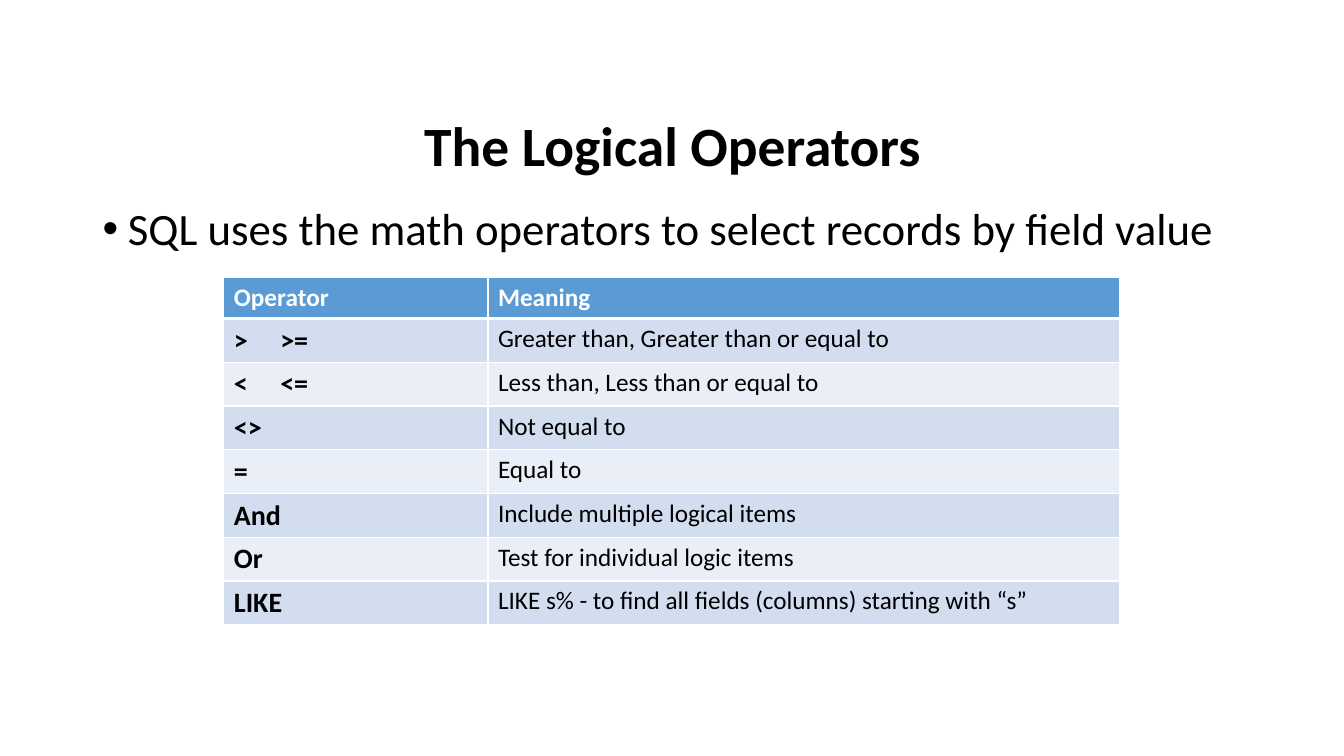
from lxml import etree
from pptx import Presentation
from pptx.dml.color import RGBColor
from pptx.enum.text import MSO_ANCHOR, PP_ALIGN
from pptx.oxml.ns import qn
from pptx.util import Inches, Pt

CENTER = PP_ALIGN.CENTER
MIDDLE = MSO_ANCHOR.MIDDLE
TOP = MSO_ANCHOR.TOP
TITLE_ONLY = 5

OPERATORS = [
    ("Operator", "Meaning"),
    (">\t>=", "Greater than, Greater than or equal to"),
    ("<\t<=", "Less than, Less than or equal to"),
    ("<>", "Not equal to"),
    ("=", "Equal to"),
    ("And", "Include multiple logical items"),
    ("Or", "Test for individual logic items"),
    ("LIKE", "LIKE s% - to find all fields (columns) starting with “s”"),
]


def rgb(hex_color):
    return RGBColor.from_string(hex_color)


class SlideBuilder:
    font = "Calibri"
    black, white = "000000", "FFFFFF"
    header_fill = "5B9BD5"
    band_fills = ("EAEFF7", "D2DEEF")

    def __init__(self, slide):
        self.slide = slide

    def style(self, paragraph, size, color, bold=False):
        font = paragraph.font
        font.name, font.size, font.bold = self.font, Pt(size), bold
        font.color.rgb = rgb(color)

    def title(self, text, left, top, width, height):
        title = self.slide.shapes.title
        title.left, title.top = Inches(left), Inches(top)
        title.width, title.height = Inches(width), Inches(height)
        frame = title.text_frame
        frame.text = text
        frame.vertical_anchor = MIDDLE
        heading = frame.paragraphs[0]
        heading.alignment = CENTER
        heading.line_spacing = 0.9
        self.style(heading, 39.6, self.black, True)

    def bullet(self, text, left, top, width, height):
        frame = self.slide.shapes.add_textbox(
            Inches(left), Inches(top), Inches(width), Inches(height)).text_frame
        frame.word_wrap = True
        frame.vertical_anchor = TOP
        statement = frame.paragraphs[0]
        statement.text = text
        statement.line_spacing = 0.9
        properties = statement._p.get_or_add_pPr()
        properties.set("marL", str(Inches(0.25)))
        properties.set("indent", str(-Inches(0.25)))
        etree.SubElement(properties, qn("a:buFont"), typeface="Arial")
        etree.SubElement(properties, qn("a:buChar"), char="•")
        self.style(statement, 32, self.black)

    def borders(self, cell, top, bottom):
        """Draw white cell borders; top and bottom are widths in points."""
        properties = cell._tc.get_or_add_tcPr()
        for side, width in (("L", 1), ("R", 1), ("T", top), ("B", bottom)):
            line = etree.SubElement(properties, qn(f"a:ln{side}"), w=str(Pt(width)))
            fill = etree.SubElement(line, qn("a:solidFill"))
            etree.SubElement(fill, qn("a:srgbClr"), val=self.white)

    def tab_stop(self, paragraph, position):
        tabs = etree.SubElement(paragraph._p.get_or_add_pPr(), qn("a:tabLst"))
        etree.SubElement(tabs, qn("a:tab"), pos=str(Inches(position)), algn="l")

    def table(self, rows, left, top, column_widths, row_height):
        table = self.slide.shapes.add_table(
            len(rows), len(column_widths), Inches(left), Inches(top),
            Inches(sum(column_widths)), Inches(row_height * len(rows))).table
        for column, width in zip(table.columns, column_widths):
            column.width = Inches(width)
        for r, texts in enumerate(rows):
            table.rows[r].height = Inches(row_height)
            header = r == 0
            for c, text in enumerate(texts):
                cell = table.cell(r, c)
                self.borders(cell, 3 if r == 1 else 1, 3 if header else 1)
                cell.fill.solid()
                cell.fill.fore_color.rgb = rgb(
                    self.header_fill if header else self.band_fills[r % 2])
                cell.text = text
                entry = cell.text_frame.paragraphs[0]
                if "\t" in text:
                    self.tab_stop(entry, 0.46)
                operator = c == 0
                self.style(entry, 20 if operator and not header else 18,
                           self.white if header else self.black,
                           header or operator)


def main():
    deck = Presentation()
    deck.slide_width, deck.slide_height = Inches(13.33), Inches(7.5)
    builder = SlideBuilder(deck.slides.add_slide(deck.slide_layouts[TITLE_ONLY]))
    builder.title("The Logical Operators", 0.92, 1.1, 11.5, 0.75)
    builder.bullet("SQL uses the math operators to select records by field value",
                   0.92, 2, 11.5, 4.76)
    builder.table(OPERATORS, 2.22, 2.75, (2.62, 6.26), 0.41)
    deck.save("out.pptx")


if __name__ == "__main__":
    main()
